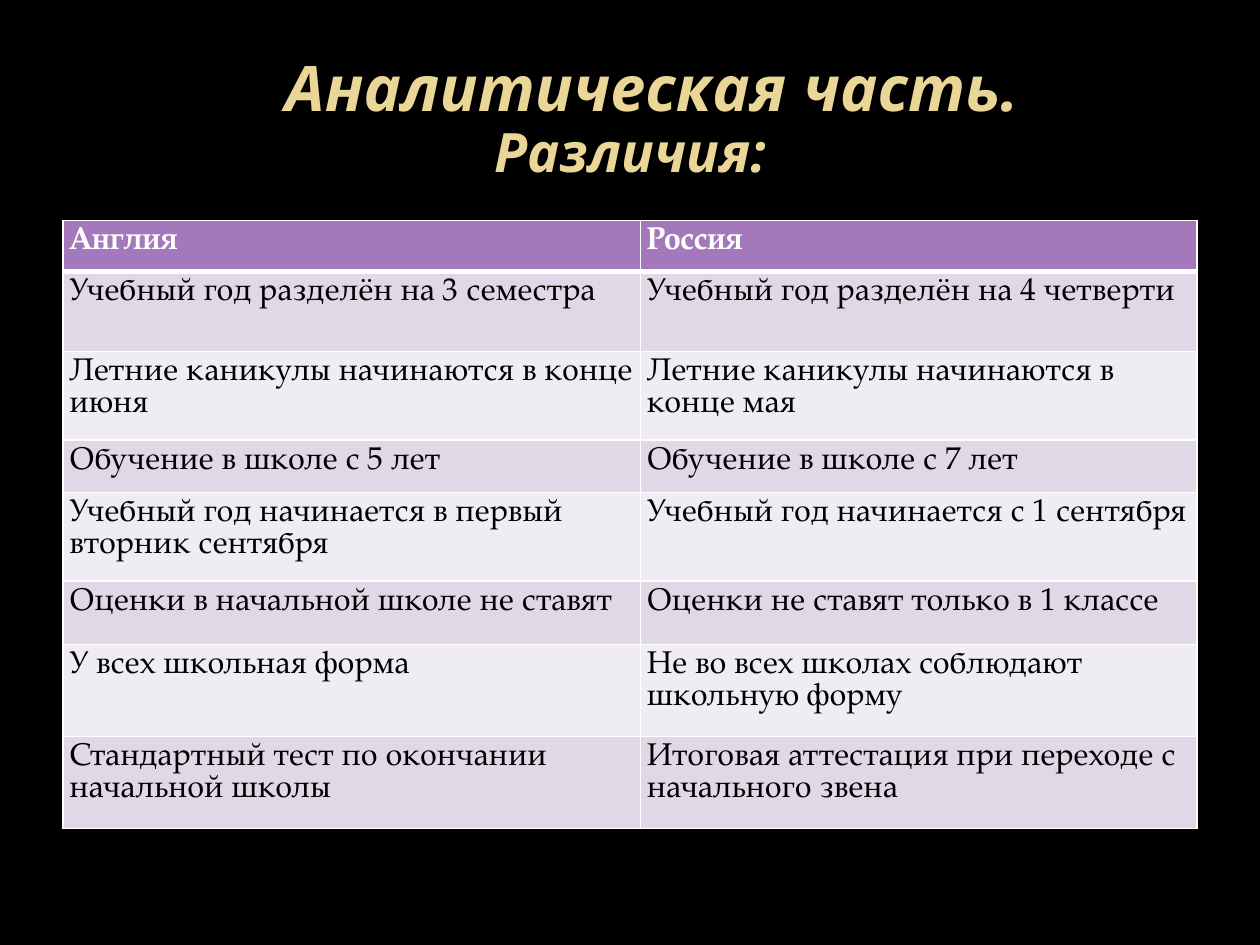
from dataclasses import dataclass

import lxml.etree
import pptx
import pptx.dml.color
import pptx.enum.text
import pptx.oxml.ns
import pptx.util

Pt = pptx.util.Pt
TITLE_FONT = "Noto Sans"
TABLE_FONT = "TeX Gyre Pagella"
GOLD, WHITE, BLACK = "EAD696", "FFFFFF", "000000"
HEADER_FILL = "A379BB"
BAND_FILLS = ("F0ECF3", "E0D7E7")


@dataclass
class TitleLine:
    text: str
    size: float
    indent: float = 0


@dataclass
class Comparison:
    england: str
    russia: str
    height: float


TITLE = [
    TitleLine("Аналитическая часть.", 36, 25),
    TitleLine("Различия:", 31),
]
COMPARISONS = [
    Comparison("Англия", "Россия", 29),
    Comparison("Учебный год разделён на 3 семестра", "Учебный год разделён на 4 четверти", 46),
    Comparison("Летние каникулы начинаются в конце июня", "Летние каникулы начинаются в конце мая", 50.5),
    Comparison("Обучение в школе с 5 лет", "Обучение в школе с 7 лет", 30),
    Comparison("Учебный год начинается в первый вторник сентября", "Учебный год начинается с 1 сентября", 50.5),
    Comparison("Оценки в начальной школе не ставят", "Оценки не ставят только в 1 классе", 36.5),
    Comparison("У всех школьная форма", "Не во всех школах соблюдают школьную форму", 52.5),
    Comparison("Стандартный тест по окончании начальной школы", "Итоговая аттестация при переходе с начального звена", 52.5),
]
COLUMN_WIDTHS = (330, 318)


def rgb(value: str) -> pptx.dml.color.RGBColor:
    return pptx.dml.color.RGBColor.from_string(value)


def add_run(paragraph, text: str, font: str, size: float, color: str, bold: bool, italic: bool = False) -> None:
    run = paragraph.add_run()
    run.text = text
    run.font.name = font
    run.font.size = Pt(size)
    run.font.color.rgb = rgb(color)
    run.font.bold = bold
    run.font.italic = italic


def draw_title(slide, lines: list[TitleLine]) -> None:
    frame = slide.shapes.add_textbox(Pt(36), Pt(21.6), Pt(648), Pt(90)).text_frame
    frame.word_wrap = True
    frame.vertical_anchor = pptx.enum.text.MSO_ANCHOR.MIDDLE
    frame.margin_top = Pt(8)
    for index, line in enumerate(lines):
        paragraph = frame.add_paragraph() if index else frame.paragraphs[0]
        paragraph.alignment = pptx.enum.text.PP_ALIGN.CENTER
        paragraph.line_spacing = 0.9
        if line.indent:
            properties = paragraph._p.get_or_add_pPr()
            properties.set("marL", str(Pt(line.indent)))
            properties.set("indent", "0")
        add_run(paragraph, line.text, TITLE_FONT, line.size, GOLD, True, True)


def set_borders(cell, top: float, bottom: float) -> None:
    qn = pptx.oxml.ns.qn
    properties = cell._tc.get_or_add_tcPr()
    widths = {"a:lnL": 1, "a:lnR": 1, "a:lnT": top, "a:lnB": bottom}
    for position, (side, width) in enumerate(widths.items()):
        border = lxml.etree.Element(qn(side), w=str(Pt(width)))
        fill = lxml.etree.SubElement(border, qn("a:solidFill"))
        lxml.etree.SubElement(fill, qn("a:srgbClr"), val=WHITE)
        properties.insert(position, border)


def draw_comparisons(slide, comparisons: list[Comparison]) -> None:
    total_height = sum(comparison.height for comparison in comparisons)
    table = slide.shapes.add_table(
        len(comparisons), len(COLUMN_WIDTHS), Pt(36), Pt(126), Pt(sum(COLUMN_WIDTHS)), Pt(total_height)
    ).table
    for column, width in zip(table.columns, COLUMN_WIDTHS):
        column.width = Pt(width)
    for index, comparison in enumerate(comparisons):
        is_header = index == 0
        table.rows[index].height = Pt(comparison.height)
        for column, text in enumerate((comparison.england, comparison.russia)):
            cell = table.cell(index, column)
            cell.margin_left = cell.margin_right = Pt(3.6)
            cell.margin_top = cell.margin_bottom = Pt(3.6)
            cell.fill.solid()
            cell.fill.fore_color.rgb = rgb(HEADER_FILL if is_header else BAND_FILLS[index % 2])
            set_borders(cell, 3 if index == 1 else 1, 3 if is_header else 1)
            add_run(
                cell.text_frame.paragraphs[0], text, TABLE_FONT, 18, WHITE if is_header else BLACK, is_header
            )


def main() -> None:
    presentation = pptx.Presentation()
    presentation.slide_width = Pt(720)
    presentation.slide_height = Pt(540)
    slide = presentation.slides.add_slide(presentation.slide_layouts[6])
    slide.background.fill.solid()
    slide.background.fill.fore_color.rgb = rgb(BLACK)
    draw_title(slide, TITLE)
    draw_comparisons(slide, COMPARISONS)
    presentation.save("out.pptx")


if __name__ == "__main__":
    main()
